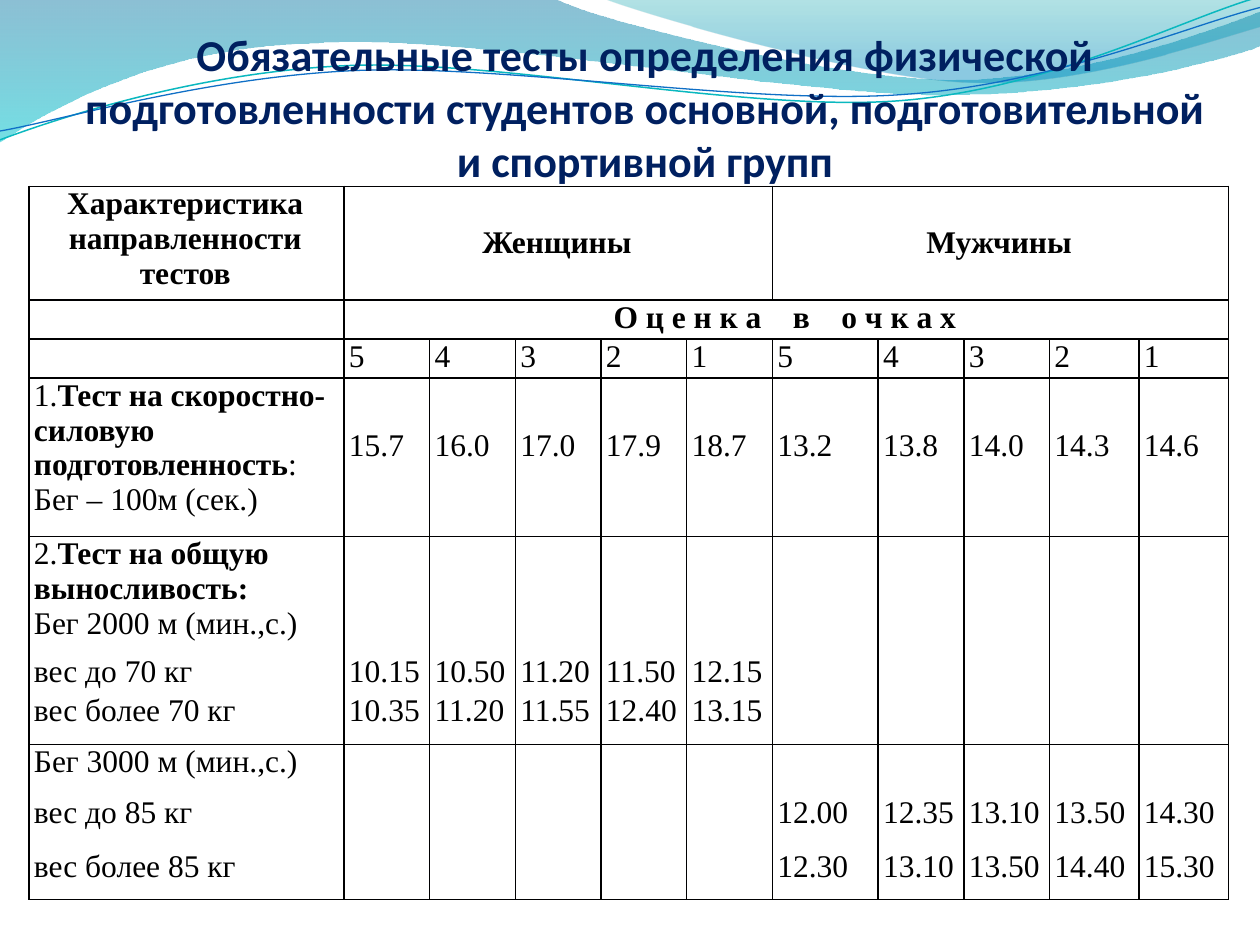
from dataclasses import dataclass
from math import cos, radians, sin

from lxml import etree
from pptx import Presentation
from pptx import util as u
from pptx.dml.color import RGBColor
from pptx.enum import text
from pptx.oxml import ns


@dataclass(frozen=True)
class Theme:
    """Colours, fonts and type sizes of the slide."""
    title: str = "002060"
    ink: str = "000000"
    rule: str = "000001"
    paper: str = "FFFFFF"
    title_font: str = "Calibri"
    table_font: str = "Times New Roman"
    title_size: float = 25.2
    table_size: float = 18
    left_wave: tuple = ((0, "0074A1", 45), (1, "00C6CF", 55))
    right_wave: tuple = ((0, "00A1A9", 30), (0.8, "008BBF", 45))
    teal_line: str = "0AB8BF"
    blue_line: str = "0F6FC6"


THEME = Theme()
TILT = 2.7
COLUMNS = [2.5] + [0.68] * 5 + [0.84, 0.68, 0.68, 0.71, 0.71]
ROWS = [0.83, 0.31, 0.31, 0.4, 0.86, 0.93, 0.31, 0.41, 0.4, 0.43, 0.4]
BLOCKS = [(0, 0), (1, 1), (2, 2), (3, 4), (5, 7), (8, 10)]
MERGES = [(0, 1, 0, 5), (0, 6, 0, 10), (1, 1, 1, 10), (3, 0, 4, 0)]
HEADINGS = {(0, 0): "*Характеристика направленности тестов*", (0, 1): "*Женщины*",
            (0, 6): "*Мужчины*", (1, 1): "*О ц е н к а    в    о ч к а х*"}
LABELS = {3: "1.*Тест на скоростно-силовую подготовленность*:\nБег – 100м (сек.)",
          5: "2.*Тест на общую выносливость:*\nБег 2000 м (мин.,c.)",
          6: "вес до 70 кг", 7: "вес более 70 кг",
          8: "Бег 3000 м (мин.,с.)", 9: "вес до 85 кг", 10: "вес более 85 кг"}
SCORES = {(2, 1): "5 4 3 2 1 5 4 3 2 1",
          (4, 1): "15.7 16.0 17.0 17.9 18.7 13.2 13.8 14.0 14.3 14.6",
          (6, 1): "10.15 10.50 11.20 11.50 12.15",
          (7, 1): "10.35 11.20 11.55 12.40 13.15",
          (9, 6): "12.00 12.35 13.10 13.50 14.30",
          (10, 6): "12.30 13.10 13.50 14.40 15.30"}


def rgb(value):
    """Turn a hex value into a colour."""
    return RGBColor.from_string(value)


def turn(segment, centre, degrees):
    """Rotate the points of a segment clockwise about a centre."""
    cx, cy = centre
    c, n = cos(radians(degrees)), sin(radians(degrees))
    turned = []
    for x, y in zip(segment[::2], segment[1::2]):
        turned += [cx + (x - cx) * c - (y - cy) * n, cy + (x - cx) * n + (y - cy) * c]
    return turned


def outline(s, segments, close):
    """Build a freeform of lines (pairs) and Bezier curves (sextets) in inches."""
    points = [(u.Inches(x), u.Inches(y)) for seg in segments
              for x, y in zip(seg[::2], seg[1::2])]
    builder = s.shapes.build_freeform(*points[0], scale=1.0)
    builder.add_line_segments(points[1:], close=close)
    sp = builder.convert_to_shape()
    sp.shadow.inherit = False
    lines = iter(list(sp._element.iter(ns.qn("a:lnTo"))))
    for seg in segments[1:]:
        group = [next(lines) for _ in range(len(seg) // 2)]
        if len(group) == 3:
            curve = etree.Element(ns.qn("a:cubicBezTo"))
            group[0].addprevious(curve)
            for line in group:
                curve.append(line[0])
                line.getparent().remove(line)
    return sp


def add_wave(s, segments, stops):
    """Add a wave with a translucent downward gradient."""
    sp = outline(s, segments, True)
    sp.line.fill.background()
    sp.fill.gradient()
    sp.fill.gradient_angle = 270
    for stop, (position, colour, _) in zip(sp.fill.gradient_stops, stops):
        stop.position = position
        stop.color.rgb = rgb(colour)
    for clr, (_, _, opacity) in zip(sp._element.iter(ns.qn("a:srgbClr")), stops):
        etree.SubElement(clr, ns.qn("a:alpha"), val=str(opacity * 1000))


def add_swoosh(s, segments, centre, colour, width):
    """Add a thin tilted curve."""
    sp = outline(s, [turn(seg, centre, TILT) for seg in segments], False)
    sp.rotation = 360 - TILT
    sp.fill.background()
    sp.line.color.rgb = rgb(colour)
    sp.line.width = u.Pt(width)


def add_run(p, words, font, size, colour, bold):
    """Append a formatted run to a paragraph."""
    r = p.add_run()
    r.text = words
    r.font.name, r.font.size, r.font.bold = font, u.Pt(size), bold
    r.font.color.rgb = rgb(colour)


def add_title(s, words):
    """Add the centred slide title."""
    sp = s.shapes.add_textbox(*map(u.Inches, (0.62, 0.23, 9, 1.25)))
    tf = sp.text_frame
    tf.word_wrap = True
    tf.vertical_anchor = text.MSO_ANCHOR.BOTTOM
    tf.margin_left = tf.margin_right = tf.margin_bottom = 0
    tf.margin_top = u.Inches(0.05)
    p = tf.paragraphs[0]
    p.alignment = text.PP_ALIGN.CENTER
    add_run(p, words, THEME.title_font, THEME.title_size, THEME.title, True)


def write_cell(cell, words, centred=False):
    """Write lines into a cell; asterisks enclose bold words."""
    tf = cell.text_frame
    for i, line in enumerate(words.split("\n")):
        p = tf.add_paragraph() if i else tf.paragraphs[0]
        p.alignment = text.PP_ALIGN.CENTER if centred else text.PP_ALIGN.LEFT
        for j, part in enumerate(line.split("*")):
            if part:
                add_run(p, part, THEME.table_font, THEME.table_size, THEME.ink, j % 2 == 1)


def style_cell(cell, top, bottom):
    """Set a cell's margins, borders and fill."""
    cell.margin_left, cell.margin_right = u.Inches(0.04), u.Inches(0.06)
    cell.margin_top = cell.margin_bottom = 0
    tcPr = cell._tc.get_or_add_tcPr()
    for side, shown in (("L", True), ("R", True), ("T", top), ("B", bottom)):
        ln = etree.SubElement(tcPr, ns.qn("a:ln" + side), w=str(u.Pt(1)))
        if shown:
            fill = etree.SubElement(ln, ns.qn("a:solidFill"))
            etree.SubElement(fill, ns.qn("a:srgbClr"), val=THEME.rule)
        else:
            etree.SubElement(ln, ns.qn("a:noFill"))
    cell.fill.solid()
    cell.fill.fore_color.rgb = rgb(THEME.paper)


def add_score_table(s):
    """Add the table of tests and scores."""
    frame = s.shapes.add_table(len(ROWS), len(COLUMNS),
                               *map(u.Inches, (0.23, 1.48, sum(COLUMNS), sum(ROWS))))
    table = frame.table
    table.first_row = table.horz_banding = False
    for column, width in zip(table.columns, COLUMNS):
        column.width = u.Inches(width)
    for row, height in zip(table.rows, ROWS):
        row.height = u.Inches(height)
    for first, last in BLOCKS:
        for r in range(first, last + 1):
            for cell in table.rows[r].cells:
                style_cell(cell, r == first, r == last)
    for r1, c1, r2, c2 in MERGES:
        table.cell(r1, c1).merge(table.cell(r2, c2))
    for place, words in HEADINGS.items():
        write_cell(table.cell(*place), words, centred=True)
    for c in (1, 6):
        table.cell(0, c).vertical_anchor = text.MSO_ANCHOR.MIDDLE
    for r, words in LABELS.items():
        write_cell(table.cell(r, 0), words)
    for (r, start), values in SCORES.items():
        for c, value in enumerate(values.split(), start):
            write_cell(table.cell(r, c), value)


def main():
    """Build and save the slide."""
    prs = Presentation()
    prs.slide_width, prs.slide_height = u.Inches(10), u.Inches(7.5)
    s = prs.slides.add_slide(prs.slide_layouts[6])
    add_wave(s, [(0, 0), (4.4, -0.01), (4.76, 0.17, 6.64, 0.63, 7.58, 0.63),
                 (8.53, 0.63, 9.58, 0.26, 10, 0.09), (10.01, 0.36),
                 (9.83, 0.44, 8.7, 0.76, 7.46, 0.75), (6.22, 0.75, 3.82, 0.28, 2.57, 0.34),
                 (1.29, 0.36, 0.46, 0.83, -0.01, 1.13)], THEME.left_wave)
    add_wave(s, [(4.79, -0.01), (5.09, 0.11, 6.82, 0.62, 7.69, 0.65),
                 (8.56, 0.69, 9.61, 0.32, 10, 0.21), (10, 0)], THEME.right_wave)
    add_swoosh(s, [(0, 1.11), (0.48, 0.93, 1.58, 0.57, 2.77, 0.52),
                   (3.95, 0.47, 5.93, 0.89, 7.13, 0.8), (8.33, 0.71, 9.38, 0.15, 9.98, -0.02)],
               (4.99, 0.58), THEME.teal_line, 0.85)
    add_swoosh(s, [(0, 1.04), (0.47, 0.96, 1.64, 0.61, 2.83, 0.56),
                   (4.03, 0.51, 5.97, 0.84, 7.17, 0.75), (8.36, 0.67, 9.41, 0.21, 10, 0.06)],
               (5, 0.59), THEME.blue_line, 0.75)
    add_title(s, "Обязательные тесты определения физической подготовленности студентов "
                 "основной, подготовительной и спортивной групп")
    add_score_table(s)
    prs.save("out.pptx")


if __name__ == "__main__":
    main()
